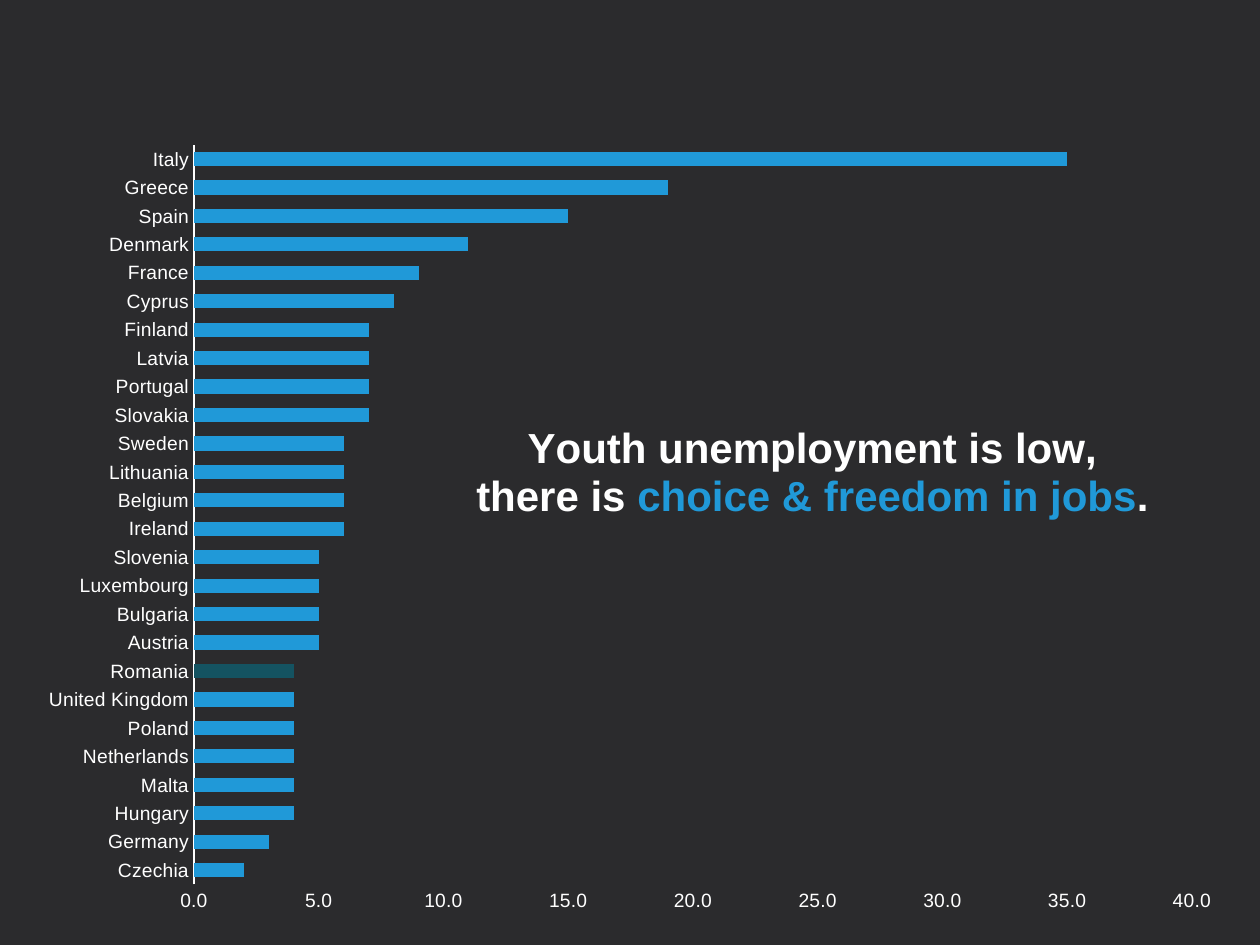
from typing import NamedTuple

from lxml import etree
from pptx import Presentation
from pptx.chart.data import CategoryChartData
from pptx.dml.color import RGBColor
from pptx.enum.chart import XL_CHART_TYPE, XL_TICK_MARK
from pptx.oxml.ns import qn
from pptx.util import Inches, Pt

BAR_CLUSTERED = XL_CHART_TYPE.BAR_CLUSTERED
NO_TICK = XL_TICK_MARK.NONE

BACKGROUND = RGBColor(0x2B, 0x2B, 0x2D)
WHITE = RGBColor(0xFF, 0xFF, 0xFF)
BLUE = RGBColor(0x20, 0x99, 0xD8)
TEAL = RGBColor(0x14, 0x53, 0x61)

CHART_WIDTH, CHART_HEIGHT = 9.53, 7.01


class Country(NamedTuple):
    name: str
    rate: int


class TitleRun(NamedTuple):
    text: str
    color: RGBColor


COUNTRIES = [
    Country("Czechia", 2),
    Country("Germany", 3),
    Country("Hungary", 4),
    Country("Malta", 4),
    Country("Netherlands", 4),
    Country("Poland", 4),
    Country("United Kingdom", 4),
    Country("Romania", 4),
    Country("Austria", 5),
    Country("Bulgaria", 5),
    Country("Luxembourg", 5),
    Country("Slovenia", 5),
    Country("Ireland", 6),
    Country("Belgium", 6),
    Country("Lithuania", 6),
    Country("Sweden", 6),
    Country("Slovakia", 7),
    Country("Portugal", 7),
    Country("Latvia", 7),
    Country("Finland", 7),
    Country("Cyprus", 8),
    Country("France", 9),
    Country("Denmark", 11),
    Country("Spain", 15),
    Country("Greece", 19),
    Country("Italy", 35),
]
HIGHLIGHTED = "Romania"

TITLE_LINES = [
    [TitleRun("Youth unemployment is low,", WHITE)],
    [
        TitleRun("there is ", WHITE),
        TitleRun("choice & freedom in jobs", BLUE),
        TitleRun(".", WHITE),
    ],
]


def set_font(font, size: int, name: str, color: RGBColor = WHITE) -> None:
    font.size = Pt(size)
    font.name = name
    font.color.rgb = color


def set_layout(parent, index: int, modes: dict[str, str], **inches: float) -> None:
    """Place a chart part by hand, with lengths in inches within the chart."""
    for old in parent.findall(qn("c:layout")):
        parent.remove(old)
    layout = etree.Element(qn("c:layout"))
    manual = etree.SubElement(layout, qn("c:manualLayout"))
    fractions = {
        tag: length / (CHART_WIDTH if tag in "xw" else CHART_HEIGHT)
        for tag, length in inches.items()
    }
    for tag, value in {**modes, "xMode": "edge", "yMode": "edge", **fractions}.items():
        etree.SubElement(manual, qn(f"c:{tag}")).set("val", str(value))
    parent.insert(index, layout)


def style_axis(axis) -> None:
    axis.major_tick_mark = axis.minor_tick_mark = NO_TICK
    axis.has_major_gridlines = False
    set_font(axis.tick_labels.font, 11, "Arial")


def add_title(chart) -> None:
    chart.has_title = True
    title = chart.chart_title
    frame = title.text_frame
    for number, line in enumerate(TITLE_LINES):
        paragraph = frame.add_paragraph() if number else frame.paragraphs[0]
        set_font(paragraph.font, 24, "Arial")
        paragraph.font.bold = True
        for part in line:
            run = paragraph.add_run()
            run.text = part.text
            set_font(run.font, 24, "Arial", part.color)
            run.font.bold = True
    title.include_in_layout = True
    set_layout(title._element, 1, {}, x=3.47, y=2.97)


def add_unemployment_chart(slide) -> None:
    data = CategoryChartData(number_format="0.0")
    data.categories = [country.name for country in COUNTRIES]
    data.add_series("Series 1", [country.rate for country in COUNTRIES])
    chart = slide.shapes.add_chart(
        BAR_CLUSTERED, Inches(0.28), Inches(0.36),
        Inches(CHART_WIDTH), Inches(CHART_HEIGHT), data,
    ).chart
    set_font(chart.font, 10, "Open Sans")
    chart.has_legend = False

    style_axis(chart.category_axis)
    axis_line = chart.category_axis.format.line
    axis_line.color.rgb = WHITE
    axis_line.width = Pt(0.75)

    rates = chart.value_axis
    style_axis(rates)
    rates.format.line.fill.background()
    rates.minimum_scale, rates.maximum_scale, rates.major_unit = 0, 40, 5
    rates.tick_labels.number_format = "0.0"
    rates.tick_labels.number_format_is_linked = False

    plot = chart.plots[0]
    plot.gap_width = 100
    plot.vary_by_categories = False
    bars = plot.series[0]
    bars.format.fill.solid()
    bars.format.fill.fore_color.rgb = BLUE
    names = [country.name for country in COUNTRIES]
    highlight = bars.points[names.index(HIGHLIGHTED)].format.fill
    highlight.solid()
    highlight.fore_color.rgb = TEAL

    add_title(chart)
    plot_area = chart._chartSpace.chart.plotArea
    set_layout(plot_area, 0, {"layoutTarget": "inner"}, x=1.26, y=0.79, w=7.92, h=5.87)


def main() -> None:
    deck = Presentation()
    deck.slide_width, deck.slide_height = Inches(10), Inches(7.5)
    blank_layout = deck.slide_layouts[6]
    slide = deck.slides.add_slide(blank_layout)
    slide.background.fill.solid()
    slide.background.fill.fore_color.rgb = BACKGROUND
    add_unemployment_chart(slide)
    deck.save("out.pptx")


if __name__ == "__main__":
    main()
